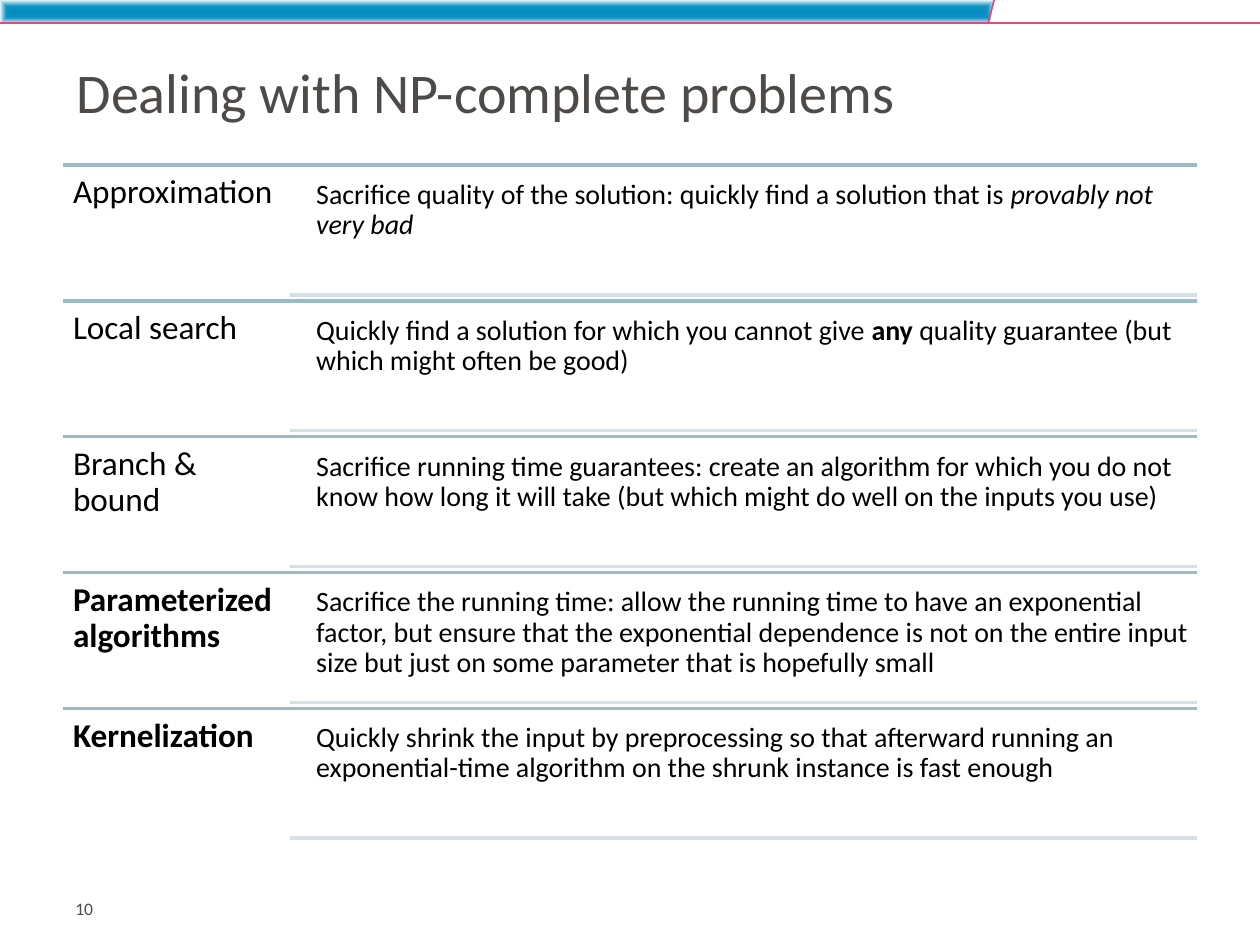
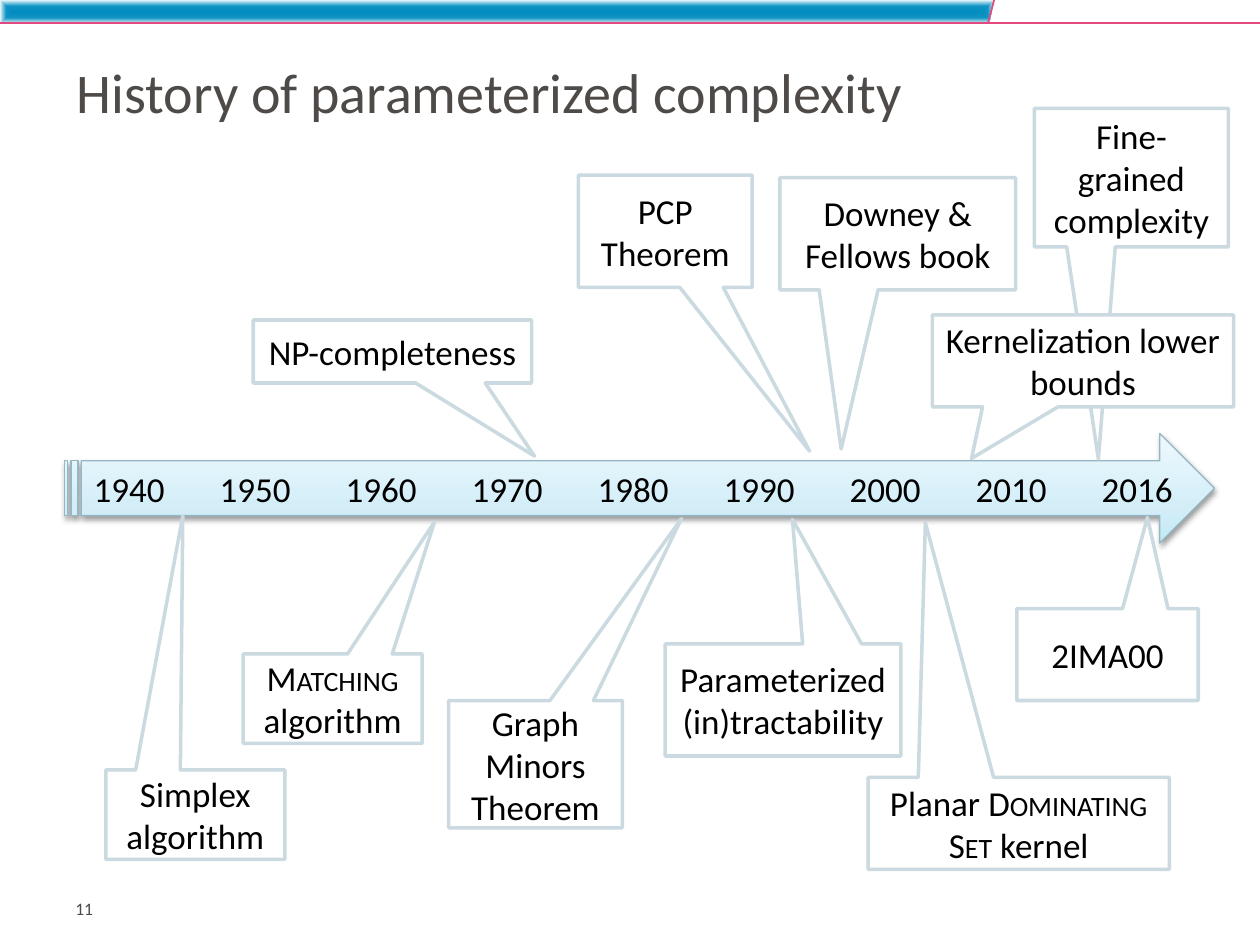
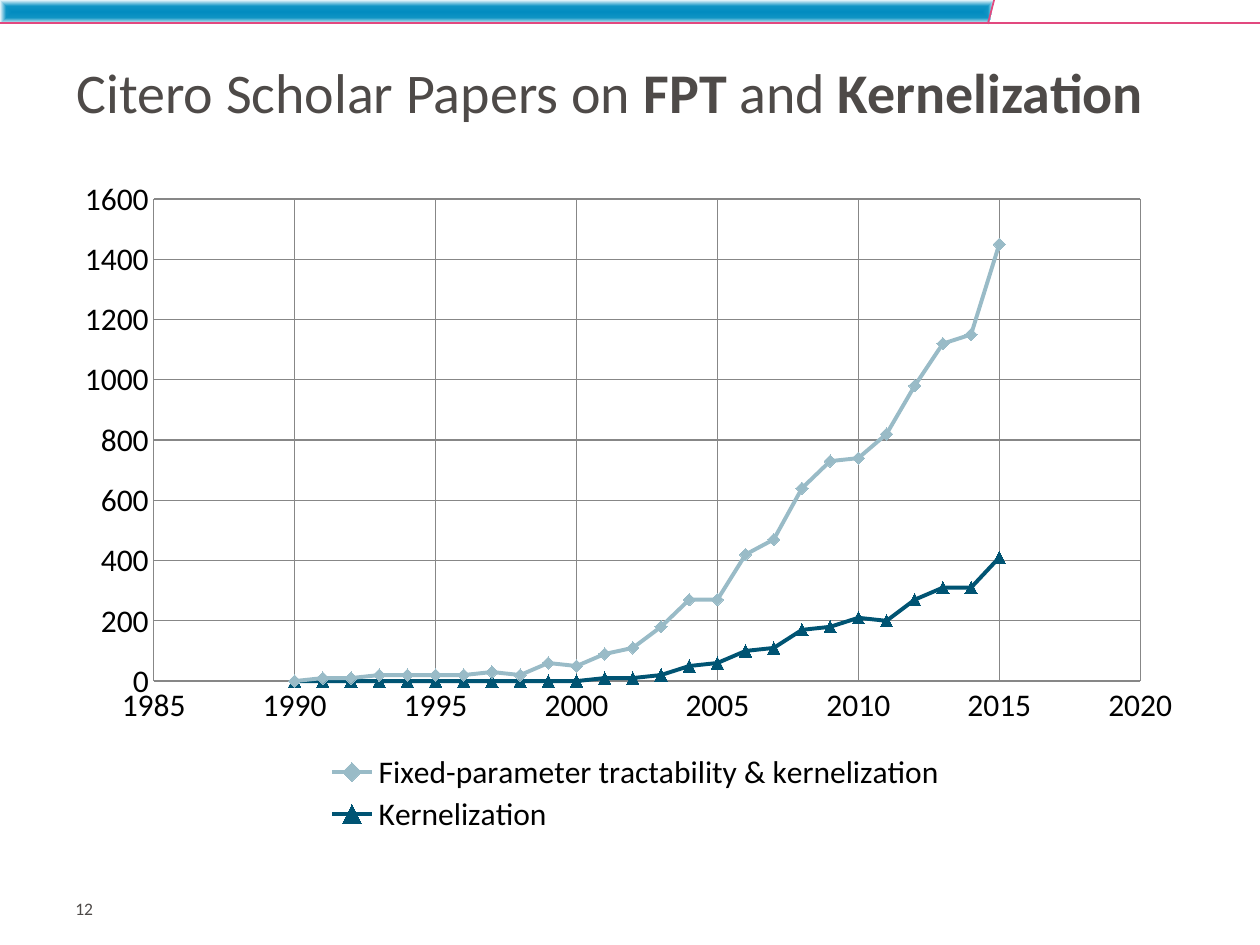
from dataclasses import dataclass
from pptx import Presentation
from pptx.chart.data import XyChartData
from pptx.dml.color import RGBColor
from pptx.enum.chart import XL_CHART_TYPE, XL_LEGEND_POSITION, XL_MARKER_STYLE, XL_TICK_MARK
from pptx.enum.shapes import MSO_CONNECTOR, MSO_SHAPE
from pptx.enum.text import MSO_ANCHOR, PP_ALIGN
from pptx.oxml import parse_xml
from pptx.oxml.ns import nsdecls, qn
from pptx.util import Inches, Pt

FONT = "Calibri"
COLORS = {
    "black": "000000",
    "white": "FFFFFF",
    "heading": "4E4A48",
    "accent": "E2497F",
    "rule": "99BBC7",
    "light rule": "D4E0E5",
    "callout edge": "CADAE0",
    "arrow edge": "95B7C4",
    "deep blue": "005473",
    "grid": "878787",
}
BAND_STOPS = ((0, "038CC0"), (49, "0F94C4"), (100, "EEF9FD"))
ARROW_STOPS = ((0, "C3E8F6"), (35, "D4EEF8"), (100, "EEF9FD"))
BAND_PATH = '<a:path path="rect"><a:fillToRect l="50000" t="50000" r="50000" b="50000"/></a:path>'
ARROW_PATH = '<a:lin ang="16200000" scaled="0"/>'

LEFT, RIGHT = 0.5, 9.5
CONTENT_TOP, CONTENT_HEIGHT = 1.31, 5.39


@dataclass(frozen=True)
class Span:
    text: str
    bold: bool = False
    italic: bool = False
    small_caps: bool = False


@dataclass(frozen=True)
class Strategy:
    name: Span
    description: tuple[Span, ...]


@dataclass(frozen=True)
class Callout:
    left: float
    top: float
    width: float
    height: float
    tip_x: float
    tip_y: float
    spans: tuple[Span, ...]


@dataclass(frozen=True)
class PaperCount:
    name: str
    values: tuple[int, ...]
    color: str
    marker: XL_MARKER_STYLE


STRATEGIES = (
    Strategy(Span("Approximation"), (
        Span("Sacrifice quality of the solution: quickly find a solution that is "),
        Span("provably not very bad", italic=True))),
    Strategy(Span("Local search"), (
        Span("Quickly find a solution for which you cannot give "),
        Span("any ", bold=True),
        Span("quality guarantee (but which might often be good)"))),
    Strategy(Span("Branch & bound"), (
        Span("Sacrifice running time guarantees: create an algorithm for which you do not "
             "know how long it will take (but which might do well on the inputs you use)"),)),
    Strategy(Span("Parameterized algorithms", bold=True), (
        Span("Sacrifice the running time: allow the running time to have an exponential "
             "factor, but ensure that the exponential dependence is not on the entire input "
             "size but just on some parameter that is hopefully small"),)),
    Strategy(Span("Kernelization", bold=True), (
        Span("Quickly shrink the input by preprocessing so that afterward running an "
             "exponential-time algorithm on the shrunk instance is fast enough"),)),
)

YEARS = (*range(1940, 2011, 10), 2016)
CALLOUTS = (
    Callout(0.84, 6.11, 1.42, 0.71, -0.07, -3.34, (Span("Simplex algorithm"),)),
    Callout(1.93, 5.19, 1.42, 0.71, 0.57, -1.98,
            (Span("Matching", small_caps=True), Span(" algorithm"))),
    Callout(2.01, 2.54, 2.21, 0.5, 0.51, 1.66, (Span("NP-completeness"),)),
    Callout(3.56, 5.56, 1.38, 1.01, 0.84, -1.93, (Span("Graph Minors Theorem"),)),
    Callout(4.59, 1.39, 1.38, 0.89, 0.83, 1.96, (Span("PCP Theorem"),)),
    Callout(5.28, 5.11, 1.87, 0.89, 0.04, -1.61, (Span("Parameterized\n(in)tractability"),)),
    Callout(6.19, 1.41, 1.87, 0.89, -0.24, 1.92, (Span("Downey & Fellows book"),)),
    Callout(6.89, 6.17, 2.39, 0.73, -0.31, -3.27,
            (Span("Planar "), Span("Dominating Set", small_caps=True), Span(" kernel"))),
    Callout(8.07, 4.83, 1.44, 0.73, 0.22, -1.49, (Span("2IMA00"),)),
    Callout(8.21, 0.86, 1.54, 1.1, -0.17, 2.03, (Span("Fine-grained complexity"),)),
    Callout(7.4, 2.5, 2.39, 0.73, -0.37, 1.06, (Span("Kernelization lower bounds"),)),
)

FIRST_PAPER_YEAR = 1990
PAPER_COUNTS = (
    PaperCount("Fixed-parameter tractability & kernelization",
               (0, 10, 10, 20, 20, 20, 20, 30, 20, 60, 50, 90, 110, 180, 270, 270, 420,
                470, 640, 730, 740, 820, 980, 1120, 1150, 1450),
               "rule", XL_MARKER_STYLE.DIAMOND),
    PaperCount("Kernelization",
               (0, 0, 0, 0, 0, 0, 0, 0, 0, 0, 0, 10, 10, 20, 50, 60, 100,
                110, 170, 180, 210, 200, 270, 310, 310, 410),
               "deep blue", XL_MARKER_STYLE.TRIANGLE),
)


def color(name: str) -> RGBColor:
    return RGBColor.from_string(COLORS[name])


def write_text(shape, spans, *, size, ink="black", align=PP_ALIGN.LEFT,
               anchor=MSO_ANCHOR.TOP, insets=(0.1, 0.05, 0.1, 0.05), spacing=1.0) -> None:
    frame = shape.text_frame
    frame.word_wrap = True
    frame.vertical_anchor = anchor
    (frame.margin_left, frame.margin_top,
     frame.margin_right, frame.margin_bottom) = map(Inches, insets)
    para = frame.paragraphs[0]
    para.alignment = align
    para.line_spacing = spacing
    for span in spans:
        for index, line in enumerate(span.text.split("\n")):
            if index:
                para.add_line_break()
            run = para.add_run()
            run.text = line
            run.font.name = FONT
            run.font.size = Pt(size)
            run.font.bold = span.bold
            run.font.italic = span.italic
            run.font.color.rgb = color(ink)
            if span.small_caps:
                run.font._element.set("cap", "small")


def add_text(page, left: float, top: float, width: float, height: float, spans, **style) -> None:
    box = page.shapes.add_textbox(Inches(left), Inches(top), Inches(width), Inches(height))
    write_text(box, spans, **style)


def add_line(page, start: tuple[float, float], end: tuple[float, float],
             ink: str, weight: float) -> None:
    line = page.shapes.add_connector(MSO_CONNECTOR.STRAIGHT, *map(Inches, (*start, *end)))
    line.line.color.rgb = color(ink)
    line.line.width = Pt(weight)
    line._element.spPr.append(parse_xml(f'<a:effectLst {nsdecls("a")}/>'))


def fill_gradient(shape, stops, direction: str) -> None:
    stop_xml = "".join(f'<a:gs pos="{position * 1000}"><a:srgbClr val="{value}"/></a:gs>'
                       for position, value in stops)
    shape.fill.background()
    properties = shape._element.spPr
    properties.replace(properties.find(qn("a:noFill")), parse_xml(
        f'<a:gradFill {nsdecls("a")} rotWithShape="1">'
        f'<a:gsLst>{stop_xml}</a:gsLst>{direction}</a:gradFill>'))


def add_page(deck, number: int, title):
    page = deck.slides.add_slide(deck.slide_layouts[6])
    outline = page.shapes.build_freeform(0, 0)
    outline.add_line_segments([(Inches(x), Inches(y))
                               for x, y in ((7.89, 0), (7.85, 0.19), (0, 0.19))], close=True)
    band = outline.convert_to_shape()
    band.shadow.inherit = False
    band.line.fill.background()
    fill_gradient(band, BAND_STOPS, BAND_PATH)
    add_line(page, (7.89, 0), (7.84, 0.19), "accent", 1)
    add_line(page, (10, 0.18), (0, 0.18), "accent", 1)
    add_text(page, 0.51, 0.38, 9, 0.69, title, size=32, ink="heading", anchor=MSO_ANCHOR.MIDDLE)
    add_text(page, LEFT, 7.13, 2.14, 0.3, (Span(str(number)),), size=10, ink="heading",
             insets=(0.1, 0, 0.1, 0.05))
    return page


def add_strategies(page) -> None:
    row_height = CONTENT_HEIGHT / len(STRATEGIES)
    for index, strategy in enumerate(STRATEGIES):
        top = CONTENT_TOP + index * row_height
        bottom = top + 1.03
        add_line(page, (LEFT, top), (RIGHT, top), "rule", 2)
        add_text(page, LEFT, top, 1.8, row_height, (strategy.name,), size=19,
                 insets=(0.08,) * 4, spacing=0.9)
        add_text(page, 2.44, top + 0.05, 7.07, 0.98, strategy.description, size=16,
                 insets=(0.07,) * 4, spacing=0.9)
        add_line(page, (2.3, bottom), (RIGHT, bottom), "light rule", 2)


def add_timeline(page) -> None:
    arrow = page.shapes.add_shape(MSO_SHAPE.STRIPED_RIGHT_ARROW,
                                  Inches(0.51), Inches(3.44), Inches(9.13), Inches(0.87))
    fill_gradient(arrow, ARROW_STOPS, ARROW_PATH)
    arrow.line.color.rgb = color("arrow edge")
    arrow.line.width = Pt(0.75)
    arrow.shadow.inherit = False
    arrow._element.spPr.find(qn("a:effectLst")).append(parse_xml(
        f'<a:outerShdw {nsdecls("a")} blurRad="{Pt(3.1)}" dist="{Pt(1.6)}" dir="5400000" '
        'rotWithShape="0"><a:srgbClr val="000000"><a:alpha val="38000"/></a:srgbClr>'
        '</a:outerShdw>'))
    write_text(arrow, (Span("\t".join(map(str, YEARS))),), size=20, anchor=MSO_ANCHOR.MIDDLE)


def add_callout(page, callout: Callout) -> None:
    box = page.shapes.add_shape(MSO_SHAPE.RECTANGULAR_CALLOUT,
                                Inches(callout.left), Inches(callout.top),
                                Inches(callout.width), Inches(callout.height))
    box.adjustments[0] = callout.tip_x
    box.adjustments[1] = callout.tip_y
    box.shadow.inherit = False
    box.fill.solid()
    box.fill.fore_color.rgb = color("white")
    box.line.color.rgb = color("callout edge")
    box.line.width = Pt(2)
    write_text(box, callout.spans, size=20, align=PP_ALIGN.CENTER, anchor=MSO_ANCHOR.MIDDLE)


def place_chart_part(part, index: int, target: str,
                     x: float, y: float, width: float, height: float) -> None:
    for layout in part.findall(qn("c:layout")):
        part.remove(layout)
    part.insert(index, parse_xml(
        f'<c:layout {nsdecls("c")}><c:manualLayout>{target}'
        f'<c:xMode val="edge"/><c:yMode val="edge"/><c:x val="{x}"/><c:y val="{y}"/>'
        f'<c:w val="{width}"/><c:h val="{height}"/></c:manualLayout></c:layout>'))


def format_axis(axis, low: int, high: int, step: int) -> None:
    axis.minimum_scale, axis.maximum_scale, axis.major_unit = low, high, step
    axis.major_tick_mark = axis.minor_tick_mark = XL_TICK_MARK.NONE
    axis.has_major_gridlines = True
    for line in (axis.format.line, axis.major_gridlines.format.line):
        line.color.rgb = color("grid")
        line.width = Pt(0.75)


def add_paper_chart(page) -> None:
    data = XyChartData()
    for count in PAPER_COUNTS:
        points = data.add_series(count.name)
        for year, value in enumerate(count.values, FIRST_PAPER_YEAR):
            points.add_data_point(year, value)
    chart = page.shapes.add_chart(XL_CHART_TYPE.XY_SCATTER_LINES, Inches(LEFT),
                                  Inches(CONTENT_TOP), Inches(RIGHT - LEFT),
                                  Inches(CONTENT_HEIGHT), data).chart
    chart.has_title = False
    chart.font.name = FONT
    chart.font.size = Pt(18)
    chart.font.color.rgb = color("black")
    format_axis(chart.category_axis, 1985, 2020, 5)
    format_axis(chart.value_axis, 0, 1600, 200)
    plot = chart.plots[0]
    plot.vary_by_categories = False
    for series, count in zip(plot.series, PAPER_COUNTS):
        series.format.line.color.rgb = color(count.color)
        series.format.line.width = Pt(2.25)
        series.marker.style = count.marker
        series.marker.size = 7
        series.marker.format.fill.solid()
        series.marker.format.fill.fore_color.rgb = color(count.color)
        series.marker.format.line.color.rgb = color(count.color)
    chart.has_legend = True
    chart.legend.position = XL_LEGEND_POSITION.BOTTOM
    chart.legend.include_in_layout = False
    plot_area = chart._chartSpace.chart.plotArea
    place_chart_part(plot_area, 0, '<c:layoutTarget val="inner"/>', 0.08, 0.05, 0.87, 0.71)
    place_chart_part(chart.legend._element, 1, "", 0.23, 0.86, 0.55, 0.13)


def main() -> None:
    deck = Presentation()
    deck.slide_width, deck.slide_height = Inches(10), Inches(7.5)
    add_strategies(add_page(deck, 10, (Span("Dealing with NP-complete problems"),)))
    history = add_page(deck, 11, (Span("History of parameterized complexity"),))
    add_timeline(history)
    for callout in CALLOUTS:
        add_callout(history, callout)
    add_paper_chart(add_page(deck, 12, (
        Span("Citero Scholar Papers on "), Span("FPT", bold=True),
        Span(" and "), Span("Kernelization", bold=True))))
    deck.save("out.pptx")


if __name__ == "__main__":
    main()
